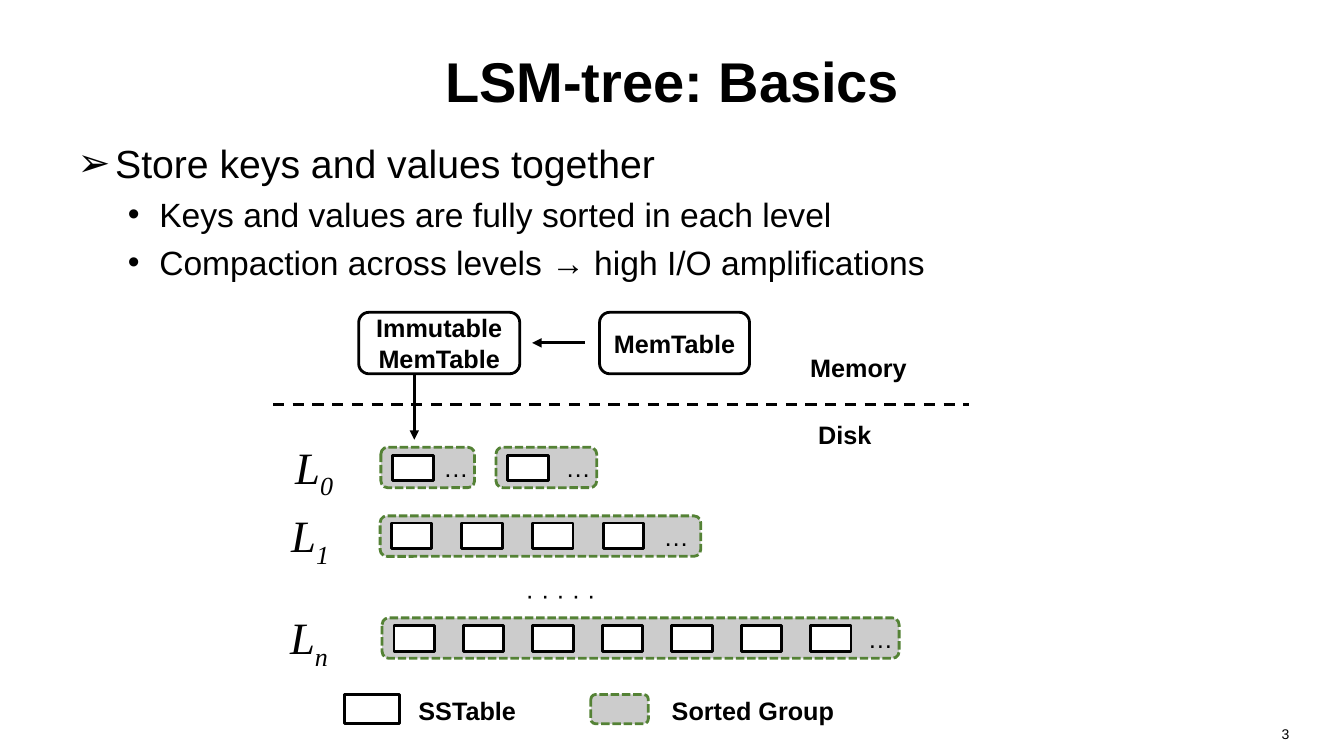
from lxml import etree
from pptx import Presentation
from pptx import util as u
from pptx.dml.color import RGBColor
from pptx.enum import dml, shapes, text
from pptx.oxml import ns

BLACK = RGBColor(0x00, 0x00, 0x00)
WHITE = RGBColor(0xFF, 0xFF, 0xFF)
GREY = RGBColor(0xCC, 0xCC, 0xCC)
GREEN = RGBColor(0x54, 0x82, 0x35)
LEFT, CENTER, RIGHT = text.PP_ALIGN.LEFT, text.PP_ALIGN.CENTER, text.PP_ALIGN.RIGHT
RECT = shapes.MSO_SHAPE.RECTANGLE
ROUND = shapes.MSO_SHAPE.ROUNDED_RECTANGLE


def place(box, left, top, width, height):
    box.left, box.top = u.Cm(left), u.Cm(top)
    box.width, box.height = u.Cm(width), u.Cm(height)


def add_span(para, words, size, bold=False, italic=False, face="Arial"):
    span = para.add_run()
    span.text = words
    span.font.size = u.Pt(size)
    span.font.name = face
    span.font.bold = bold
    span.font.italic = italic
    span.font.color.rgb = BLACK
    return span


def write(frame, lines, size=18, bold=False, align=LEFT):
    frame.word_wrap = True
    for number, line in enumerate(lines):
        para = frame.add_paragraph() if number else frame.paragraphs[0]
        para.alignment = align
        add_span(para, line, size, bold)


def add_label(page, words, left, top, width, height=1.02, size=18, bold=True, align=LEFT):
    box = page.shapes.add_textbox(u.Cm(left), u.Cm(top), u.Cm(width), u.Cm(height))
    write(box.text_frame, [words], size, bold, align)


def add_box(page, kind, left, top, width, height, fill=WHITE, line=BLACK):
    box = page.shapes.add_shape(kind, u.Cm(left), u.Cm(top), u.Cm(width), u.Cm(height))
    box.shadow.inherit = False
    box.fill.solid()
    box.fill.fore_color.rgb = fill
    box.line.color.rgb = line
    box.line.width = u.Pt(2)
    box.text_frame.vertical_anchor = text.MSO_ANCHOR.MIDDLE
    return box


def add_sstable(page, left, top, width=1.02, height=0.64):
    add_box(page, RECT, left, top, width, height)


def add_group(page, left, top, width, height=1.02):
    group = add_box(page, ROUND, left, top, width, height, GREY, GREEN)
    group.line.dash_style = dml.MSO_LINE.SQUARE_DOT
    return group


def add_line(page, start, end, weight, arrow):
    ends = [u.Cm(value) for value in (*start, *end)]
    line = page.shapes.add_connector(shapes.MSO_CONNECTOR.STRAIGHT, *ends)
    line.line.color.rgb = BLACK
    line.line.width = u.Pt(weight)
    if arrow:
        outline = line.line._get_or_add_ln()
        etree.SubElement(outline, ns.qn("a:tailEnd"), type="triangle")
    else:
        line.line.dash_style = dml.MSO_LINE.DASH
    etree.SubElement(line._element.spPr, ns.qn("a:effectLst"))


def add_heading(page, left, top, width, height):
    title = page.shapes.title
    place(title, left, top, width, height)
    title.text_frame.vertical_anchor = text.MSO_ANCHOR.MIDDLE
    write(title.text_frame, ["LSM-tree: Basics"], 40, True, CENTER)


def add_points(page, left, top, width, height):
    body = page.placeholders[1]
    place(body, left, top, width, height)
    frame = body.text_frame
    frame.word_wrap = True
    frame.auto_size = text.MSO_AUTO_SIZE.NONE
    points = [
        (0, "Store keys and values together"),
        (1, "Keys and values are fully sorted in each level"),
        (1, "Compaction across levels → high I/O amplifications"),
    ]
    styles = [("➢", 28, 0.95, -0.95, 0), ("•", 24, 2.06, -0.79, 5.5)]
    for number, (level, words) in enumerate(points):
        bullet, size, margin, indent, gap = styles[level]
        para = frame.add_paragraph() if number else frame.paragraphs[0]
        para.level = level
        para.alignment = LEFT
        para.space_before = u.Pt(gap)
        add_span(para, words, size)
        settings = para._p.get_or_add_pPr()
        settings.set("marL", str(u.Cm(margin)))
        settings.set("indent", str(u.Cm(indent)))
        etree.SubElement(settings, ns.qn("a:buFont"), typeface="Arial")
        etree.SubElement(settings, ns.qn("a:buChar"), char=bullet)


def add_memory(page, left, top):
    tables = [(0, 4.06, ["Immutable", "MemTable"]), (6.07, 3.78, ["MemTable"])]
    for offset, width, lines in tables:
        box = add_box(page, ROUND, left + offset, top, width, 1.55)
        write(box.text_frame, lines, bold=True, align=CENTER)
    add_line(page, (left + 5.69, top + 0.77), (left + 4.37, top + 0.77), 2.25, True)
    add_label(page, "Memory", left + 11.13, top + 0.89, 3.45)


def add_border(page, left, top, width):
    add_line(page, (left, top), (left + width, top), 2, False)
    add_line(page, (left + 3.56, top - 0.76), (left + 3.56, top + 0.89), 2.25, True)
    add_label(page, "Disk", left + 13.49, top + 0.25, 2.74)


def add_level(page, left, top, name, groups, inset, drop, pitch=0, margin=0.1):
    box = page.shapes.add_textbox(u.Cm(left), u.Cm(top - 0.32), u.Cm(1.9), u.Cm(1.63))
    box.text_frame.word_wrap = True
    para = box.text_frame.paragraphs[0]
    add_span(para, "L", 32, italic=True, face="Times New Roman")
    index = add_span(para, name, 32, italic=True, face="Times New Roman")
    index.font._element.set("baseline", "-25000")
    for start, width, count in groups:
        group = add_group(page, start, top, width)
        group.text_frame.margin_right = u.Cm(margin)
        write(group.text_frame, ["…"], align=RIGHT)
        for number in range(count):
            add_sstable(page, start + inset + number * pitch, top + drop)


def add_legend(page, left, top):
    add_label(page, "SSTable", left + 0.86, top - 0.1, 4.45, align=CENTER)
    add_label(page, "Sorted Group", left + 6.6, top - 0.1, 7.37, align=CENTER)
    add_sstable(page, left, top, 1.37, 0.74)
    add_group(page, left + 6.2, top, 1.45, 0.74)


def build_basics(deck):
    page = deck.slides.add_slide(deck.slide_layouts[1])
    add_heading(page, 1.7, 0.43, 30.48, 3.18)
    add_points(page, 1.7, 3.38, 30.48, 4.24)
    add_memory(page, 9.04, 7.87)
    add_border(page, 6.88, 10.19, 17.55)
    add_level(page, 7.19, 11.27, "0", [(9.6, 2.36, 1), (12.5, 2.54, 1)], 0.3, 0.21)
    add_level(page, 7.09, 13, "1", [(9.58, 8.08, 4)], 0.28, 0.18, 1.78, 0.25)
    add_label(page, "· · · · ·", 13, 14.48, 2.31, bold=False)
    add_level(page, 7.06, 15.57, "n", [(9.63, 13.03, 7)], 0.3, 0.2, 1.75)
    add_legend(page, 8.69, 17.5)
    add_label(page, "3", 24.84, 18.16, 7.9, 0.89, 10, False, RIGHT)


def main():
    deck = Presentation()
    deck.slide_width, deck.slide_height = u.Cm(33.87), u.Cm(19.05)
    build_basics(deck)
    deck.save("out.pptx")


if __name__ == "__main__":
    main()
